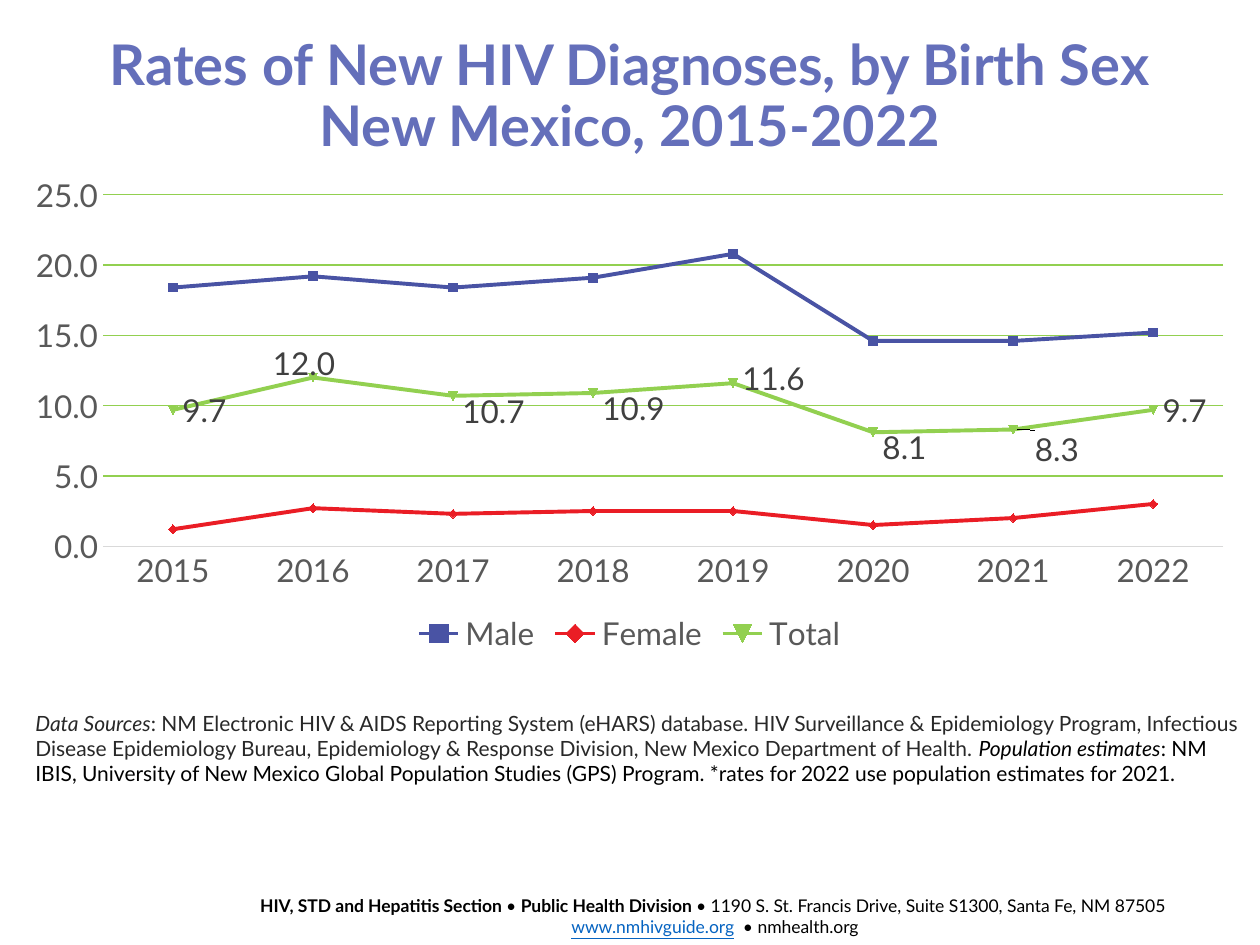
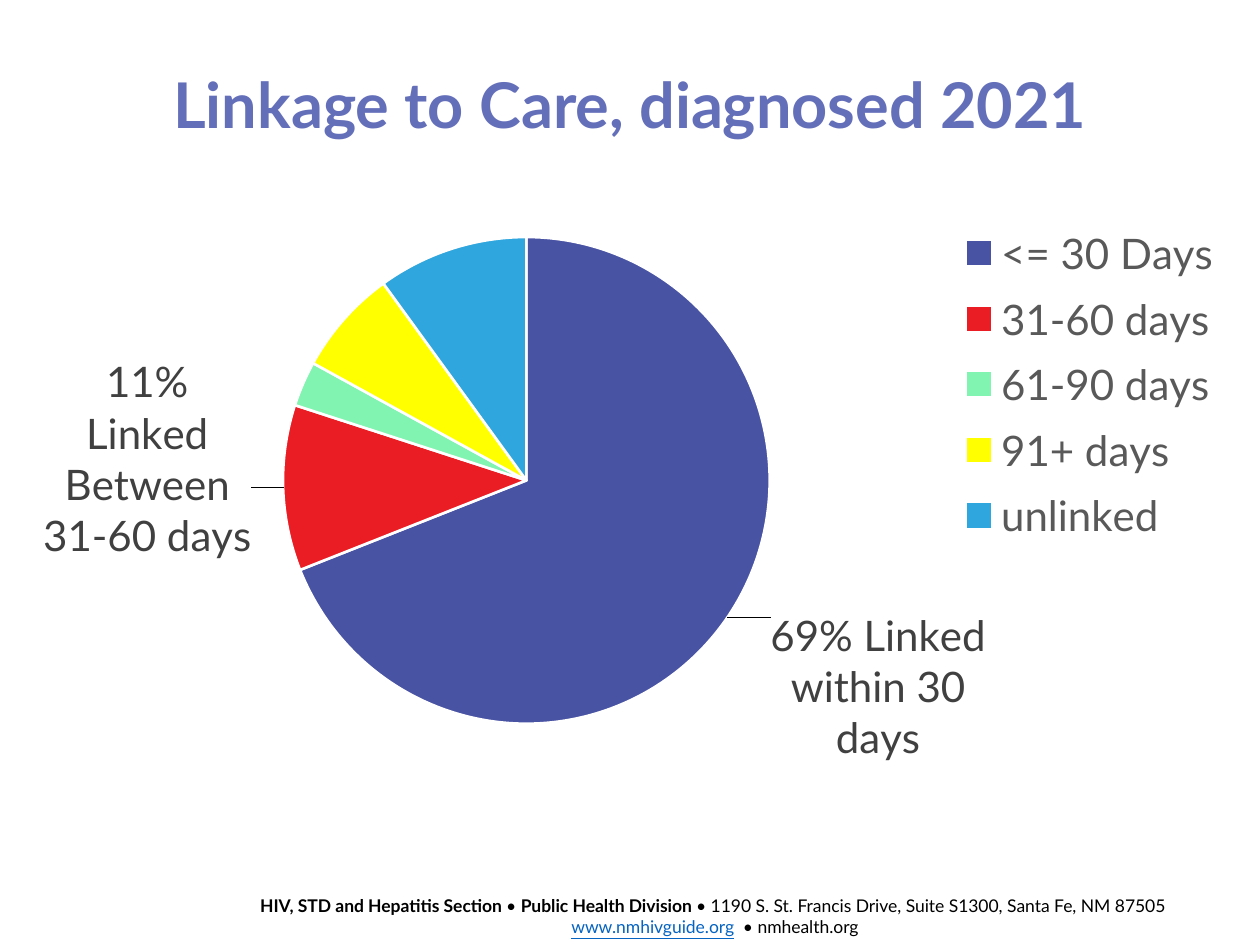
from lxml import etree
from pptx import Presentation
from pptx.chart.data import CategoryChartData
from pptx.dml.color import RGBColor
from pptx.enum.chart import XL_CHART_TYPE, XL_LABEL_POSITION, XL_LEGEND_POSITION, XL_TICK_MARK
from pptx.enum.text import MSO_ANCHOR, PP_ALIGN
from pptx.oxml import parse_xml
from pptx.oxml.ns import nsdecls
from pptx.util import Pt

PX = 914400 // 126
FONT = "Lato"
BLACK, LINK, TITLE = "000000", "0563C1", "646FBA"
AXIS_TEXT, LABEL_TEXT = "595959", "404040"
BLUE, RED, GREEN = "4953A4", "EA1D25", "92D050"
C15 = 'xmlns:c15="http://schemas.microsoft.com/office/drawing/2012/chart"'


def style(font, size, color, bold=False):
    font.name, font.size, font.bold = FONT, Pt(size), bold
    font.color.rgb = RGBColor.from_string(color)


def layout(tags, **values):
    parts = "".join(f'<c:{k} val="{v}"/>' for k, v in values.items())
    return parse_xml(f'<c:layout {nsdecls("c")}><c:manualLayout>{tags}{parts}</c:manualLayout></c:layout>')


prs = Presentation()
prs.slide_width, prs.slide_height = 1260 * PX, 945 * PX

# Titles and footers
titles = [
    ("Rates of New HIV Diagnoses, by Birth Sex\vNew Mexico, 2015-2022", 32, (0, 30, 1260, 136)),
    ("Linkage to Care, diagnosed 2021", 36, (87, 50, 1086, 116)),
]
footer = [
    ("HIV, STD and Hepatitis Section ", True, BLACK),
    ("• ", False, BLACK),
    ("Public Health Division ", True, BLACK),
    ("• 1190 S. St. Francis Drive, Suite S1300, Santa Fe, NM 87505 ", False, BLACK),
    None,
    ("www.nmhivguide.org", False, LINK),
    ("\u00a0 • nmhealth.org".replace("\u00a0", " "), False, BLACK),
]
for title, size, box in titles:
    s = prs.slides.add_slide(prs.slide_layouts[6])
    tf = s.shapes.add_textbox(*[v * PX for v in (215, 889, 1000, 56)]).text_frame
    tf.word_wrap = True
    p = tf.paragraphs[0]
    p.alignment = PP_ALIGN.CENTER
    for part in footer:
        if part is None:
            p.add_line_break()
            continue
        text, bold, color = part
        r = p.add_run()
        r.text = text
        style(r.font, 10, color, bold)
        r.font.underline = color == LINK

    tf = s.shapes.add_textbox(*[v * PX for v in box]).text_frame
    tf.word_wrap = True
    tf.vertical_anchor = MSO_ANCHOR.MIDDLE
    p = tf.paragraphs[0]
    p.text = title
    p.alignment, p.line_spacing = PP_ALIGN.CENTER, 0.9
    style(p.font, size, TITLE, True)

rates_slide, linkage_slide = prs.slides

# Data sources under the rates chart
tf = rates_slide.shapes.add_textbox(*[v * PX for v in (23, 704, 1237, 149)]).text_frame
tf.word_wrap = True
p = tf.paragraphs[0]
for text, italic, color in [
    ("Data Sources", True, "282828"),
    (": NM Electronic HIV & AIDS Reporting System (eHARS) database. HIV Surveillance & Epidemiology "
     "Program, Infectious Disease Epidemiology Bureau, Epidemiology & Response Division, "
     "New Mexico Department of Health. ", False, "282828"),
    ("Population estimates", True, BLACK),
    (": NM IBIS, University of New Mexico Global Population Studies (GPS) Program. "
     "*rates for 2022 use population estimates for 2021.", False, BLACK),
]:
    r = p.add_run()
    r.text = text
    style(r.font, 12, color)
    r.font.italic = italic

# Line chart of rates
data = CategoryChartData(number_format="0.0")
data.categories = [str(year) for year in range(2015, 2023)]
data.add_series("Male", [18.4, 19.2, 18.4, 19.1, 20.8, 14.6, 14.6, 15.2])
data.add_series("Female", [1.2, 2.7, 2.3, 2.5, 2.5, 1.5, 2, 3])
data.add_series("Total", [9.7, 12, 10.7, 10.9, 11.6, 8.1, 8.3, 9.7])
box = [v * PX for v in (11, 166, 1237, 493)]
chart = rates_slide.shapes.add_chart(XL_CHART_TYPE.LINE, *box, data).chart
chart.has_title = False
style(chart.font, 10, BLACK)
chart.has_legend = True
chart.legend.position = XL_LEGEND_POSITION.BOTTOM
chart.legend.include_in_layout = False
style(chart.legend.font, 18, AXIS_TEXT)
for axis in (chart.category_axis, chart.value_axis):
    axis.major_tick_mark = axis.minor_tick_mark = XL_TICK_MARK.NONE
    style(axis.tick_labels.font, 18, AXIS_TEXT)
line = chart.category_axis.format.line
line.width, line.color.rgb = Pt(0.75), RGBColor.from_string("D9D9D9")
axis = chart.value_axis
axis.minimum_scale, axis.maximum_scale, axis.major_unit = 0, 25, 5
axis.tick_labels.number_format, axis.tick_labels.number_format_is_linked = "0.0", False
axis.format.line.fill.background()
line = axis.major_gridlines.format.line
line.width, line.color.rgb = Pt(0.75), RGBColor.from_string(GREEN)
for ser, color in zip(chart.plots[0].series, (BLUE, RED, GREEN)):
    ser.smooth = False
    ser.marker.style = None
    ser.format.line.width = Pt(2.25)
    ser.format.line.color.rgb = RGBColor.from_string(color)

# Labels of the Total line, shifted clear of it
total = chart.plots[0].series[2]
shifts = [(0, 0), (-0.04, -0.03), (0, 0.03), (0, 0.03), (0, -0.01), (0, 0.03), (0.01, 0.04), (0, 0)]
for i, (x, y) in enumerate(shifts):
    label = total.points[i].data_label
    style(label.font, 18, LABEL_TEXT)
    label.position = XL_LABEL_POSITION.RIGHT
for d, (x, y) in zip(chart.element.xpath(".//c:dLbl"), shifts):
    if x or y:
        d.insert(1, layout("", x=x, y=y))

# Pie chart of linkage to care
data = CategoryChartData()
data.categories = ["<= 30 Days", "31-60 days", "61-90 days", "91+ days", "unlinked"]
data.add_series("Series 1", [69, 11, 3, 7, 10])
box = [v * PX for v in (18, 183, 1225, 601)]
chart = linkage_slide.shapes.add_chart(XL_CHART_TYPE.PIE, *box, data).chart
chart.has_title = False
style(chart.font, 10, BLACK)
chart.has_legend = True
legend = chart.legend
legend.position = XL_LEGEND_POSITION.RIGHT
legend.include_in_layout = False
style(legend.font, 24, AXIS_TEXT)
edges = '<c:xMode val="edge"/><c:yMode val="edge"/>'
chart.element.xpath(".//c:legendPos")[0].addnext(layout(edges, x=0.76, y=0.05, w=0.23, h=0.57))
area = chart.element.xpath(".//c:plotArea")[0]
for old in area.xpath("c:layout"):
    area.remove(old)
area.insert(0, layout('<c:layoutTarget val="inner"/>' + edges, x=0.19, y=0.09, w=0.45, h=0.81))
plot = chart.plots[0]
plot.vary_by_categories = True
ser = plot.series[0]
for i, color in enumerate((BLUE, RED, "82F4B1", "FFFF00", "2FA6DE")):
    fmt = ser.points[i].format
    fmt.fill.solid()
    fmt.fill.fore_color.rgb = RGBColor.from_string(color)
    fmt.line.width, fmt.line.color.rgb = Pt(1.5), RGBColor.from_string("FFFFFF")

# Callouts on the two largest linked groups
callouts = [("69% Linked within 30 days", 0.03, -0.02), ("11% Linked\nBetween 31-60 days", -0.02, -0.05)]
for i, (text, x, y) in enumerate(callouts):
    label = ser.points[i].data_label
    label.text_frame.text = text
    for p in label.text_frame.paragraphs:
        style(p.font, 24, LABEL_TEXT)
    label.position = XL_LABEL_POSITION.OUTSIDE_END
for d, (text, x, y) in zip(chart.element.xpath(".//c:dLbl"), callouts):
    d.insert(1, layout("", x=x, y=y))
    d.append(parse_xml(
        f'<c:extLst {nsdecls("c")}><c:ext uri="{{CE6537A1-D6FC-4f65-9D91-7224C49458BB}}" {C15}><c15:layout>'
        '<c:manualLayout><c:w val="0.2"/><c:h val="0.25"/></c:manualLayout></c15:layout></c:ext></c:extLst>'))
labels = ser.data_labels
labels.show_value = False
group = chart.element.xpath(".//c:ser/c:dLbls")[0]
for old in group.xpath("c:showLeaderLines"):
    group.remove(old)
etree.SubElement(group, group.xpath("c:showVal")[0].tag.replace("showVal", "showLeaderLines")).set("val", "1")

prs.save("out.pptx")
